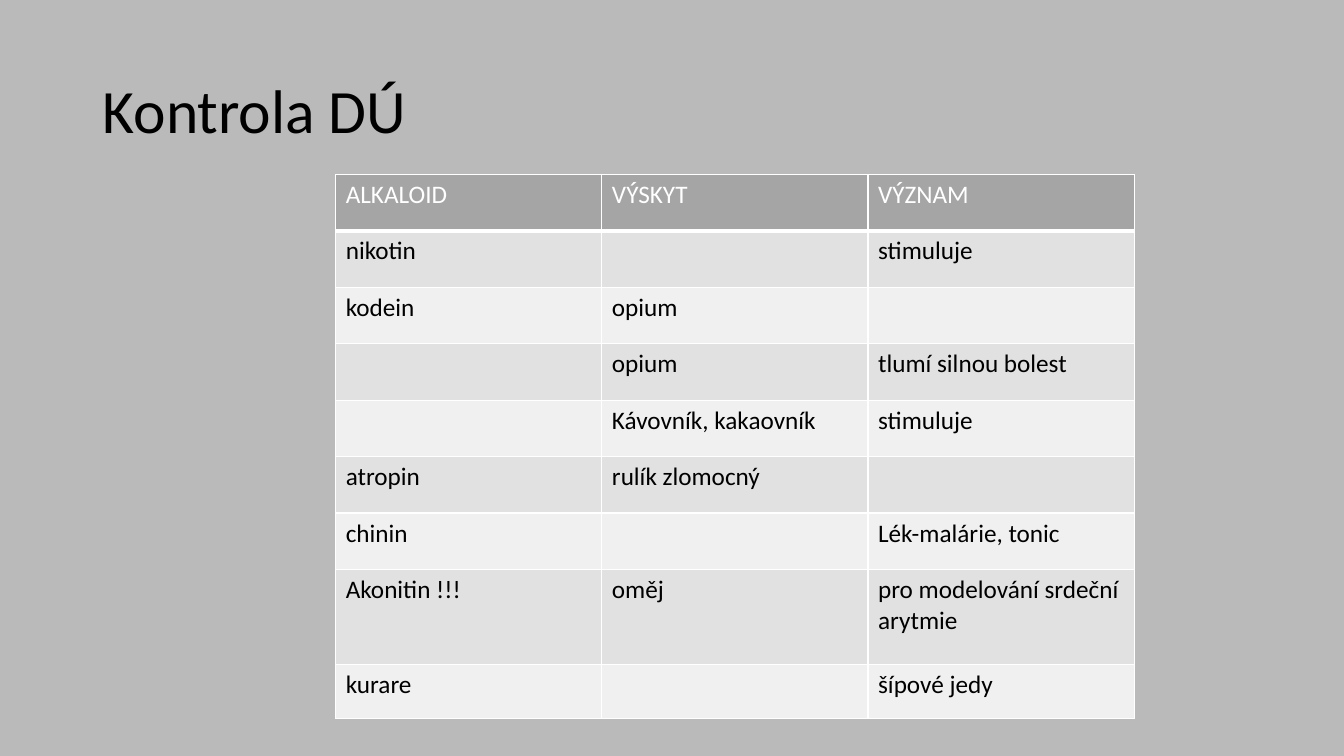
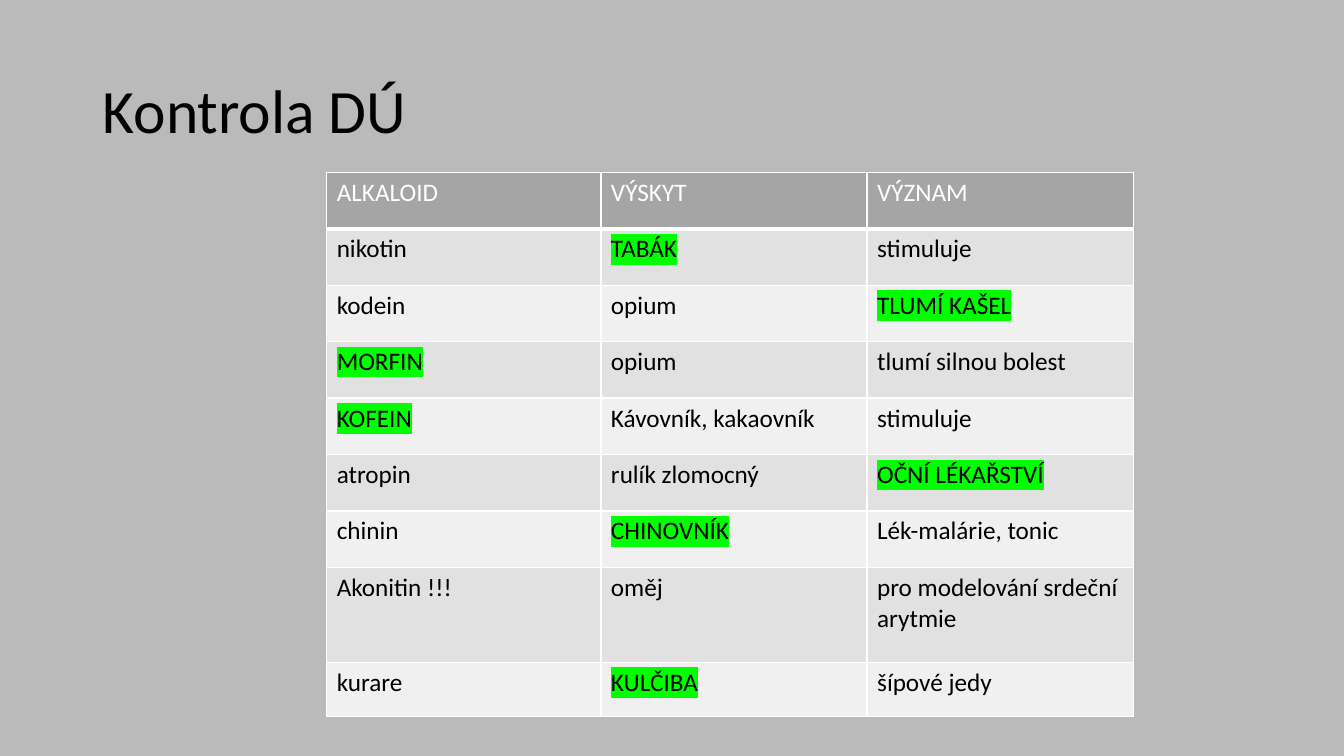
import pptx
import pptx.dml.color
import pptx.enum.text
import pptx.oxml.ns
import pptx.util
from lxml import etree

Inches = pptx.util.Inches
Pt = pptx.util.Pt

TITLE = "Kontrola DÚ"
HEADINGS = ("ALKALOID", "VÝSKYT", "VÝZNAM")
ALKALOIDS = [
    ("nikotin", "TABÁK", "stimuluje"),
    ("kodein", "opium", "TLUMÍ KAŠEL"),
    ("MORFIN", "opium", "tlumí silnou bolest"),
    ("KOFEIN", "Kávovník, kakaovník", "stimuluje"),
    ("atropin", "rulík zlomocný", "OČNÍ LÉKAŘSTVÍ"),
    ("chinin", "CHINOVNÍK", "Lék-malárie, tonic"),
    ("Akonitin !!!", "oměj", "pro modelování srdeční arytmie"),
    ("kurare", "KULČIBA", "šípové jedy"),
]
ANSWERS = {"TABÁK", "TLUMÍ KAŠEL", "MORFIN", "KOFEIN",
           "OČNÍ LÉKAŘSTVÍ", "CHINOVNÍK", "KULČIBA"}

SLIDES = [
    {"left": 3.33, "top": 1.73, "columns": (2.64, 2.64, 2.64), "solved": False},
    {"left": 3.24, "top": 1.71, "columns": (2.72, 2.64, 2.64), "solved": True},
]
ROW_HEIGHTS = [0.56] * 7 + [0.94, 0.54]

FONT = "Calibri"
BACKGROUND = "BABABA"
BLACK = "000000"
WHITE = "FFFFFF"
HEADER_FILL = "A5A5A5"
BAND_FILLS = ("F0F0F0", "E1E1E1")
ANSWER_GREEN = "00FF00"


def color(hex_code):
    return pptx.dml.color.RGBColor.from_string(hex_code)


def add_element(parent, tag, **attributes):
    return etree.SubElement(parent, pptx.oxml.ns.qn(tag), **attributes)


def style_span(span, size, hex_code):
    span.font.name = FONT
    span.font.size = Pt(size)
    span.font.bold = False
    span.font.color.rgb = color(hex_code)


def highlight(span, hex_code):
    """Mark the text; the schema wants the mark right after the text fill."""
    properties = span.font._element
    mark = add_element(properties, "a:highlight")
    add_element(mark, "a:srgbClr", val=hex_code)
    properties.find(pptx.oxml.ns.qn("a:solidFill")).addnext(mark)


def add_borders(cell, bottom_width):
    """Draw white borders; call before the cell gets its fill."""
    properties = cell._tc.get_or_add_tcPr()
    for side, width in (("L", 1), ("R", 1), ("T", 1), ("B", bottom_width)):
        line = add_element(properties, f"a:ln{side}", w=str(Pt(width)))
        add_element(add_element(line, "a:solidFill"), "a:srgbClr", val=WHITE)


def add_title(slide):
    box = slide.shapes.add_textbox(Inches(0.92), Inches(0.4), Inches(11.5), Inches(1.45))
    frame = box.text_frame
    frame.word_wrap = True
    frame.vertical_anchor = pptx.enum.text.MSO_ANCHOR.MIDDLE
    frame.text = TITLE
    para = frame.paragraphs[0]
    para.line_spacing = 0.9
    style_span(para.runs[0], 44, BLACK)


def fill_cell(cell, text, row_index):
    is_header = row_index == 0
    add_borders(cell, 3 if is_header else 1)
    cell.fill.solid()
    cell.fill.fore_color.rgb = color(HEADER_FILL if is_header else BAND_FILLS[row_index % 2])
    para = cell.text_frame.paragraphs[0]
    para.text = text
    para.font.size = Pt(18)
    for span in para.runs:
        style_span(span, 18, WHITE if is_header else BLACK)
        if text in ANSWERS:
            highlight(span, ANSWER_GREEN)


def add_worksheet(slide, left, top, columns, solved):
    """Add the alkaloid table, leaving the answers blank unless solved."""
    rows = [HEADINGS] + ALKALOIDS
    frame = slide.shapes.add_table(
        len(rows), len(columns), Inches(left), Inches(top),
        Inches(sum(columns)), Inches(sum(ROW_HEIGHTS)))
    table = frame.table
    for column, width in zip(table.columns, columns):
        column.width = Inches(width)
    for row, height in zip(table.rows, ROW_HEIGHTS):
        row.height = Inches(height)
    for row_index, texts in enumerate(rows):
        for column_index, text in enumerate(texts):
            shown = text if solved or text not in ANSWERS else ""
            fill_cell(table.cell(row_index, column_index), shown, row_index)


def main():
    deck = pptx.Presentation()
    deck.slide_width = Inches(13.33)
    deck.slide_height = Inches(7.5)
    for worksheet in SLIDES:
        slide = deck.slides.add_slide(deck.slide_layouts[6])
        slide.background.fill.solid()
        slide.background.fill.fore_color.rgb = color(BACKGROUND)
        add_title(slide)
        add_worksheet(slide, **worksheet)
    deck.save("out.pptx")


if __name__ == "__main__":
    main()
